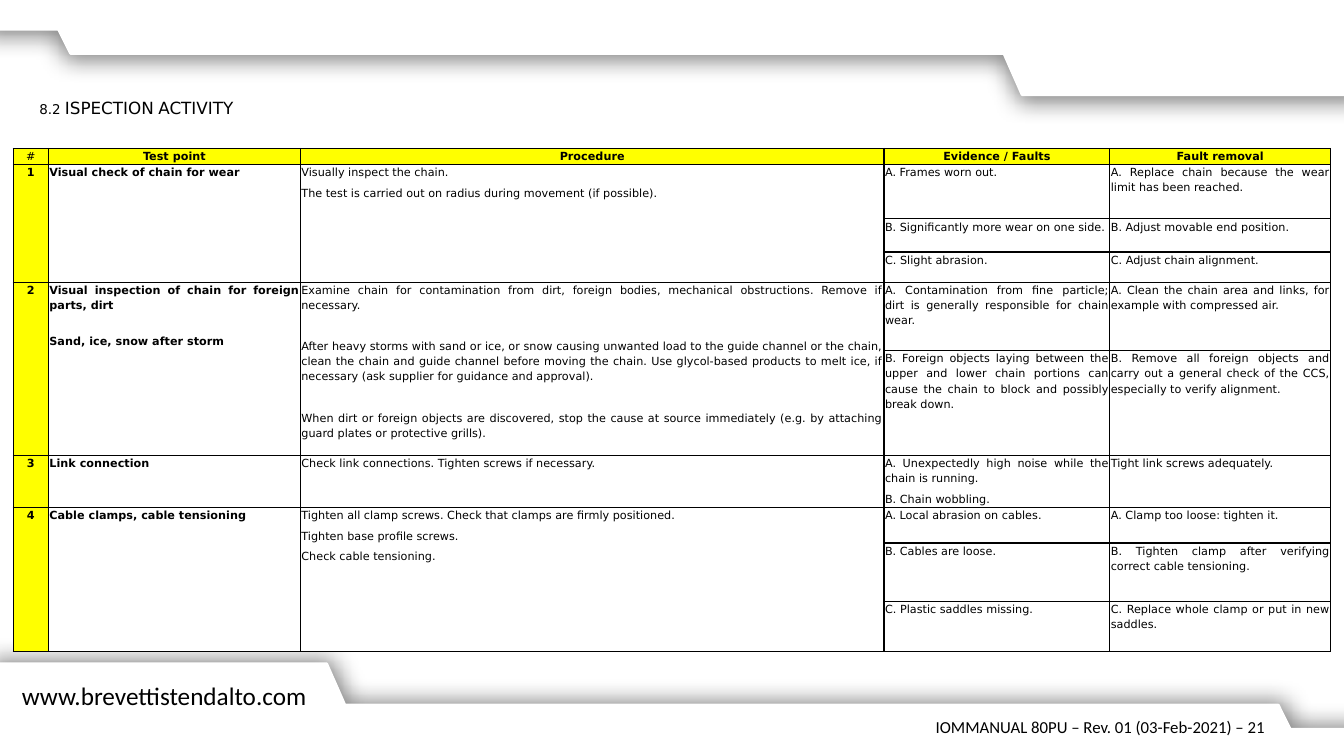
from lxml.etree import SubElement
from pptx import Presentation
from pptx.dml.color import RGBColor
from pptx.enum.text import MSO_ANCHOR, MSO_AUTO_SIZE, PP_ALIGN
from pptx.oxml import parse_xml
from pptx.oxml.ns import nsdecls, qn
from pptx.util import Pt

BLACK, WHITE, YELLOW = "000000", "FFFFFF", "FFFF00"
TABLE_FONT, FOOTER_FONT = "DejaVu Sans", "Calibri"

# Banner outline along the top edge; the bottom one is turned by half
BANNER = [(-8.6, 20.9), (41.8, 20.9), (50.4, 38.2), (717.1, 38.2),
          (730.1, 67.7), (972, 67.7), (972, -7.2), (-8.6, -7.2)]
TURN_X, TURN_Y = 963.4, 541.8

COLUMN_WIDTHS = [25.2, 180, 416.9, 161.3, 157.7]
ROW_HEIGHTS = [11.6, 38.8, 23.6, 21.7, 48.8, 75, 36.2, 25.4, 41.8, 36]
HEADINGS = ["#", "Test point", "Procedure", "Evidence / Faults", "Fault removal"]

# Space after a paragraph: usual, and before a new topic
SPACE_AFTER, TEST_GAP, PROCEDURE_GAP = 4, 14.7, 18.7

# Each check: test points, procedure steps, gaps, and (evidence, removal) pairs
CHECKS = [
    (["Visual check of chain for wear"],
     ["Visually inspect the chain.",
      "The test is carried out on radius during movement (if possible)."],
     (SPACE_AFTER, SPACE_AFTER),
     [(["A. Frames worn out."],
       "A. Replace chain because the wear limit has been reached."),
      (["B. Significantly more wear on one side."], "B. Adjust movable end position."),
      (["C. Slight abrasion."], "C. Adjust chain alignment.")]),
    (["Visual inspection of chain for foreign parts, dirt", "Sand, ice, snow after storm"],
     ["Examine chain for contamination from dirt, foreign bodies, mechanical "
      "obstructions. Remove if necessary.",
      "After heavy storms with sand or ice, or snow causing unwanted load to the guide "
      "channel or the chain, clean the chain and guide channel before moving the chain. "
      "Use glycol-based products to melt ice, if necessary (ask supplier for guidance "
      "and approval).",
      "When dirt or foreign objects are discovered, stop the cause at source immediately "
      "(e.g. by attaching guard plates or protective grills)."],
     (TEST_GAP, PROCEDURE_GAP),
     [(["A. Contamination from fine particle; dirt is generally responsible for chain wear."],
       "A. Clean the chain area and links, for example with compressed air."),
      (["B. Foreign objects laying between the upper and lower chain portions can cause "
        "the chain to block and possibly break down."],
       "B. Remove all foreign objects and carry out a general check of the CCS, "
       "especially to verify alignment.")]),
    (["Link connection"],
     ["Check link connections. Tighten screws if necessary."],
     (SPACE_AFTER, SPACE_AFTER),
     [(["A. Unexpectedly high noise while the chain is running.", "B. Chain wobbling."],
       "Tight link screws adequately.")]),
    (["Cable clamps, cable tensioning"],
     ["Tighten all clamp screws. Check that clamps are firmly positioned.",
      "Tighten base profile screws.", "Check cable tensioning."],
     (SPACE_AFTER, SPACE_AFTER),
     [(["A. Local abrasion on cables."], "A. Clamp too loose: tighten it."),
      (["B. Cables are loose."],
       "B. Tighten clamp after verifying correct cable tensioning."),
      (["C. Plastic saddles missing."], "C. Replace whole clamp or put in new saddles.")]),
]


def color(value):
    return RGBColor.from_string(value)


def style_font(font, name, size, bold=False):
    font.name, font.size, font.bold = name, Pt(size), bold
    font.color.rgb = color(BLACK)


def add_banner(slide, points, shadow_angle):
    builder = slide.shapes.build_freeform(Pt(points[0][0]), Pt(points[0][1]))
    builder.add_line_segments([(Pt(x), Pt(y)) for x, y in points[1:]], close=True)
    shape = builder.convert_to_shape()
    shape.fill.solid()
    shape.fill.fore_color.rgb = color(WHITE)
    shape.line.color.rgb = color(WHITE)
    shape.line.width = Pt(2)
    # Soft shadow
    shape._element.spPr.append(parse_xml(
        f'<a:effectLst {nsdecls("a")}><a:outerShdw blurRad="{Pt(16)}" dist="{Pt(4)}" '
        f'dir="{shadow_angle * 60000}" algn="ctr" rotWithShape="0"><a:srgbClr val="{BLACK}">'
        '<a:alpha val="48000"/></a:srgbClr></a:outerShdw></a:effectLst>'))


def add_label(slide, text, left, top, width, height, size, align):
    box = slide.shapes.add_textbox(Pt(left), Pt(top), Pt(width), Pt(height))
    box.text_frame.word_wrap = True
    paragraph = box.text_frame.paragraphs[0]
    paragraph.text = text
    paragraph.alignment = align
    style_font(paragraph.font, FOOTER_FONT, size)


def set_title(slide, text):
    title = slide.shapes.title
    title.left, title.top, title.width, title.height = Pt(20.9), Pt(66.2), Pt(383.8), Pt(21.6)
    frame = title.text_frame
    frame.auto_size = MSO_AUTO_SIZE.NONE
    frame.vertical_anchor = MSO_ANCHOR.TOP
    paragraph = frame.paragraphs[0]
    paragraph.alignment = PP_ALIGN.LEFT
    paragraph.line_spacing = 1.0
    run = paragraph.add_run()
    run.text = text
    style_font(run.font, TABLE_FONT, 12)
    run.font._element.set("cap", "small")


def format_cell(cell, fill):
    cell.margin_left = cell.margin_right = Pt(0.7)
    cell.margin_top = cell.margin_bottom = 0
    properties = cell._tc.get_or_add_tcPr()
    for side in ("lnL", "lnR", "lnT", "lnB"):
        border = SubElement(properties, qn(f"a:{side}"), w=str(Pt(1)))
        SubElement(SubElement(border, qn("a:solidFill")), qn("a:srgbClr"), val=BLACK)
    cell.fill.solid()
    cell.fill.fore_color.rgb = color(fill)
    style_font(cell.text_frame.paragraphs[0].font, TABLE_FONT, 8)


def fill_cell(cell, texts, align=PP_ALIGN.JUSTIFY, bold=False, gap=SPACE_AFTER):
    cell.text = "\n".join(texts)
    for paragraph in cell.text_frame.paragraphs:
        paragraph.alignment = align
        paragraph.line_spacing = 1.15
        paragraph.space_after = Pt(gap)
        style_font(paragraph.font, TABLE_FONT, 8, bold)
    paragraph.space_after = Pt(SPACE_AFTER)


def add_inspection_table(slide):
    table = slide.shapes.add_table(
        len(ROW_HEIGHTS), len(COLUMN_WIDTHS), Pt(9.4), Pt(106),
        Pt(sum(COLUMN_WIDTHS)), Pt(sum(ROW_HEIGHTS))).table
    table.first_row = table.horz_banding = False
    for column, width in zip(table.columns, COLUMN_WIDTHS):
        column.width = Pt(width)
    for index, (row, height) in enumerate(zip(table.rows, ROW_HEIGHTS)):
        row.height = Pt(height)
        for position, cell in enumerate(row.cells):
            format_cell(cell, YELLOW if index == 0 or position == 0 else WHITE)

    # Heading row
    for position, heading in enumerate(HEADINGS):
        fill_cell(table.cell(0, position), [heading], PP_ALIGN.CENTER, bold=position > 0)

    # One block of rows per check
    top = 1
    for number, (tests, steps, gaps, faults) in enumerate(CHECKS, 1):
        if len(faults) > 1:
            for position in range(3):
                table.cell(top, position).merge(table.cell(top + len(faults) - 1, position))
        fill_cell(table.cell(top, 0), [str(number)], PP_ALIGN.CENTER, bold=True)
        fill_cell(table.cell(top, 1), tests, bold=True, gap=gaps[0])
        fill_cell(table.cell(top, 2), steps, gap=gaps[1])
        for row, (evidence, removal) in enumerate(faults, top):
            fill_cell(table.cell(row, 3), evidence)
            fill_cell(table.cell(row, 4), [removal])
        top += len(faults)


def main():
    presentation = Presentation()
    presentation.slide_width, presentation.slide_height = Pt(960), Pt(540)
    slide = presentation.slides.add_slide(presentation.slide_layouts[5])

    # Page frame
    add_banner(slide, [(TURN_X - x, TURN_Y - y) for x, y in BANNER], 303)
    add_banner(slide, BANNER, 123)
    add_label(slide, "www.brevettistendalto.com", 8.6, 482.4, 221, 28.8, 18, PP_ALIGN.LEFT)

    # Content; the title goes above the banners
    add_inspection_table(slide)
    set_title(slide, "8.2 ISPECTION ACTIVITY")
    slide.shapes._spTree.append(slide.shapes.title._element)
    add_label(slide, "IOMMANUAL 80PU – Rev. 01 (03-Feb-2021) – 21",
              632.9, 508.3, 277.9, 21.6, 12, PP_ALIGN.RIGHT)

    presentation.save("out.pptx")


if __name__ == "__main__":
    main()
